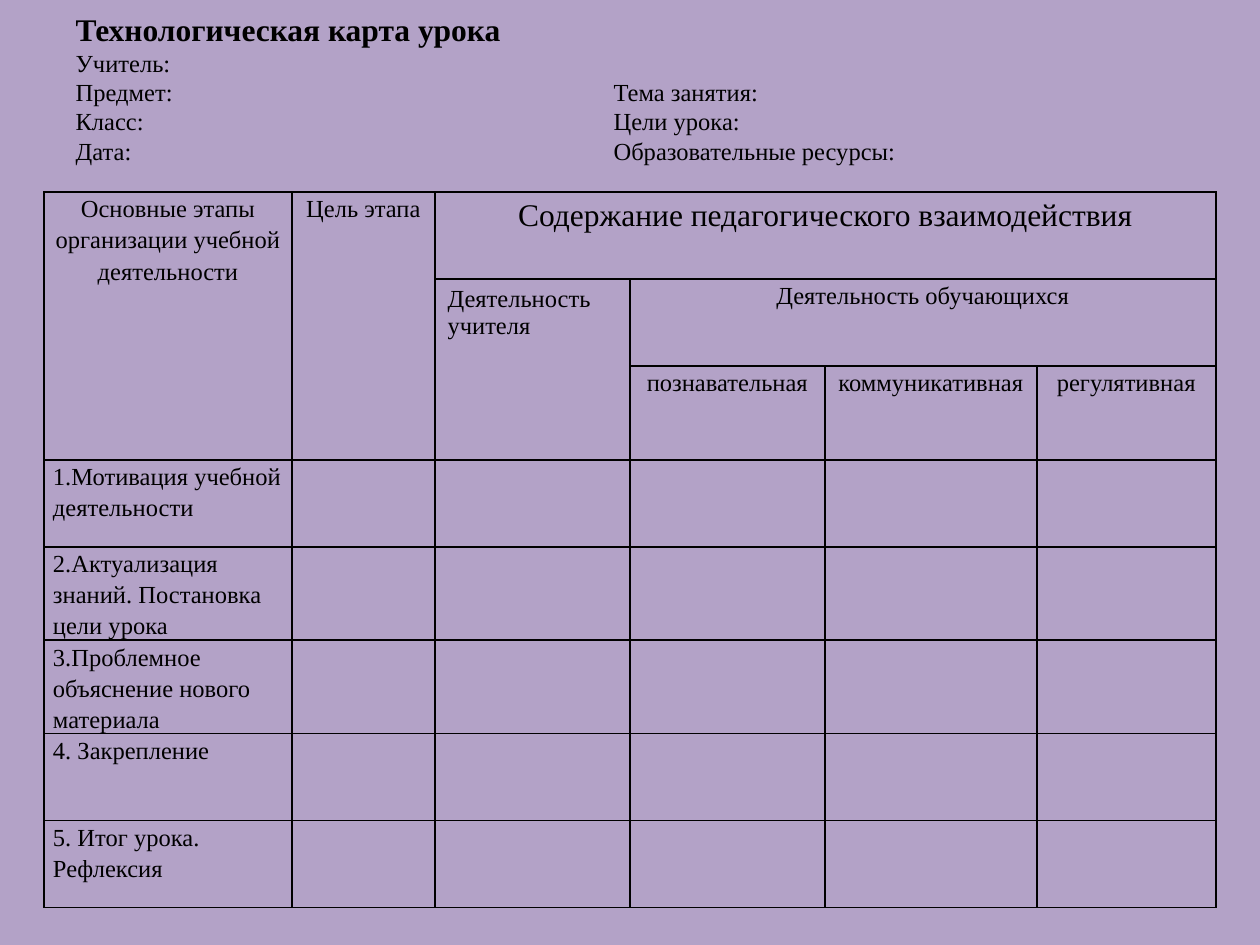
from dataclasses import dataclass

from lxml import etree
from pptx import Presentation
from pptx import util as u
from pptx.dml.color import RGBColor
from pptx.enum import text
from pptx.oxml import ns

EMU_PER_PX = 914400 / 126
FONT = "Times New Roman"
COLORS = {"background": "B3A2C7", "ink": "000000"}
LEFT, CENTER = text.PP_ALIGN.LEFT, text.PP_ALIGN.CENTER

HEADING = "Технологическая карта урока"
DETAILS = [
    "Учитель:",
    "Предмет:\tТема занятия:",
    "Класс:\tЦели урока:",
    "Дата:\tОбразовательные ресурсы:",
]
STAGES = [
    "1.Мотивация учебной деятельности",
    "2.Актуализация знаний. Постановка цели урока",
    "3.Проблемное объяснение нового материала",
    "4. Закрепление",
    "5. Итог урока. Рефлексия",
]
COLUMN_WIDTHS = [248, 143, 195, 195, 212, 179]
HEADER_HEIGHTS = [87, 87, 94]
STAGE_HEIGHT = 87


@dataclass
class Entry:
    row: int
    column: int
    wording: str
    rows: int = 1
    columns: int = 1
    size: int = 14
    align: text.PP_ALIGN = CENTER
    compact: bool = True  # narrow margins with looser lines


HEADERS = [
    Entry(0, 0, "Основные этапы организации учебной деятельности", rows=3),
    Entry(0, 1, "Цель этапа", rows=3),
    Entry(0, 2, "Содержание педагогического взаимодействия", columns=4,
          size=18, compact=False),
    Entry(1, 2, "Деятельность учителя", rows=2, align=LEFT, compact=False),
    Entry(1, 3, "Деятельность обучающихся", columns=3),
    Entry(2, 3, "познавательная"),
    Entry(2, 4, "коммуникативная"),
    Entry(2, 5, "регулятивная"),
]


def px(length: int) -> u.Emu:
    return u.Emu(round(length * EMU_PER_PX))


def style_paragraph(para, size: int, align, bold: bool = False) -> None:
    para.alignment = align
    para.font.name = FONT
    para.font.size = u.Pt(size)
    para.font.bold = bold
    para.font.color.rgb = RGBColor.from_string(COLORS["ink"])


def add_tab_stop(para, position: int) -> None:
    properties = para._p.get_or_add_pPr()
    stops = etree.Element(ns.qn("a:tabLst"))
    etree.SubElement(stops, ns.qn("a:tab"), pos=str(px(position)), algn="l")
    defaults = properties.find(ns.qn("a:defRPr"))
    defaults.addprevious(stops)


def fill_title(title) -> None:
    title.left, title.top = px(63), px(0)
    title.width, title.height = px(1134), px(175)
    frame = title.text_frame
    frame.vertical_anchor = text.MSO_ANCHOR.MIDDLE
    frame.text = "\n".join([HEADING, *DETAILS])
    heading, *details = frame.paragraphs
    style_paragraph(heading, 18, LEFT, bold=True)
    for para in details:
        style_paragraph(para, 14, LEFT)
        add_tab_stop(para, 538)


def outline_cell(cell) -> None:
    """Clear the fill and draw a 1 pt line on all four sides."""
    cell.fill.background()
    properties = cell._tc.get_or_add_tcPr()
    for index, side in enumerate(("lnL", "lnR", "lnT", "lnB")):
        line = etree.Element(ns.qn(f"a:{side}"), w=str(u.Pt(1)))
        fill = etree.SubElement(line, ns.qn("a:solidFill"))
        etree.SubElement(fill, ns.qn("a:srgbClr"), val=COLORS["ink"])
        properties.insert(index, line)


def fill_cell(table, entry: Entry) -> None:
    cell = table.cell(entry.row, entry.column)
    if entry.rows > 1 or entry.columns > 1:
        cell.merge(table.cell(entry.row + entry.rows - 1,
                              entry.column + entry.columns - 1))
    cell.text = entry.wording
    para = cell.text_frame.paragraphs[0]
    style_paragraph(para, entry.size, entry.align)
    if entry.compact:
        cell.margin_left = cell.margin_right = px(9)
        cell.margin_top = cell.margin_bottom = 0
        para.line_spacing = 1.15


def add_lesson_table(slide) -> None:
    heights = HEADER_HEIGHTS + [STAGE_HEIGHT] * len(STAGES)
    table = slide.shapes.add_table(
        len(heights), len(COLUMN_WIDTHS), px(44), px(192),
        px(sum(COLUMN_WIDTHS)), px(sum(heights))).table
    table.first_row = table.horz_banding = False
    for column, width in zip(table.columns, COLUMN_WIDTHS):
        column.width = px(width)
    for row, height in zip(table.rows, heights):
        row.height = px(height)
    for cell in table.iter_cells():
        outline_cell(cell)
    stages = [Entry(row, 0, stage, align=LEFT)
              for row, stage in enumerate(STAGES, len(HEADER_HEIGHTS))]
    for entry in HEADERS + stages:
        fill_cell(table, entry)


def main() -> None:
    deck = Presentation()
    deck.slide_width, deck.slide_height = px(1260), px(945)
    slide = deck.slides.add_slide(deck.slide_layouts.get_by_name("Title Only"))
    background = slide.background.fill
    background.solid()
    background.fore_color.rgb = RGBColor.from_string(COLORS["background"])
    fill_title(slide.shapes.title)
    add_lesson_table(slide)
    deck.save("out.pptx")


if __name__ == "__main__":
    main()
